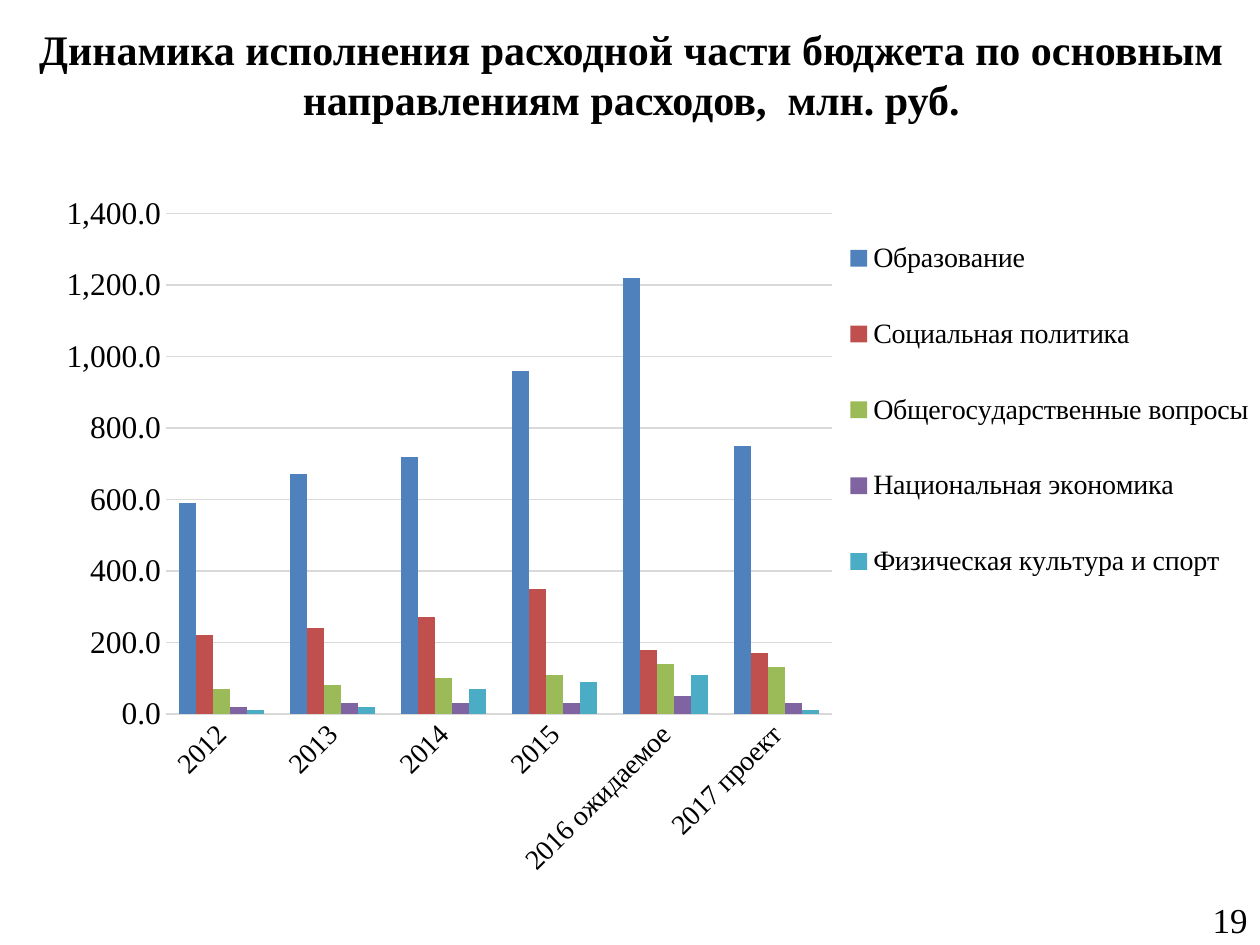
from lxml import etree
from pptx import Presentation
from pptx.chart import data as cd
from pptx.dml import color as dc
from pptx.enum import chart as ec, text as et
from pptx.oxml import ns
from pptx.util import Inches, Pt

FONT = "Times New Roman"
HUES = {
    "text": "000000",
    "grid": "D9D9D9",
    "Образование": "4F81BD",
    "Социальная политика": "C0504D",
    "Общегосударственные вопросы": "9BBB59",
    "Национальная экономика": "8064A2",
    "Физическая культура и спорт": "4BACC6",
}
YEARS = ["2012", "2013", "2014", "2015", "2016 ожидаемое", "2017 проект"]
COSTS = {
    "Образование": [590, 670, 720, 960, 1220, 750],
    "Социальная политика": [220, 240, 270, 350, 180, 170],
    "Общегосударственные вопросы": [70, 80, 100, 110, 140, 130],
    "Национальная экономика": [20, 30, 30, 30, 50, 30],
    "Физическая культура и спорт": [10, 20, 70, 90, 110, 10],
}


def rgb(name):
    return dc.RGBColor.from_string(HUES[name])


def style(font, size, bold=False, face=FONT):
    font.name, font.size, font.bold = face, Pt(size), bold
    font.color.rgb = rgb("text")


def write(shape, words, size, align, bold=False):
    frame = shape.text_frame
    frame.word_wrap = True
    frame.vertical_anchor = et.MSO_ANCHOR.MIDDLE
    para = frame.paragraphs[0]
    para.alignment = align
    run = para.add_run()
    run.text = words
    style(run.font, size, bold)


def place(node, index, box, inner=False):
    for old in node.findall(ns.qn("c:layout")):
        node.remove(old)
    layout = etree.Element(ns.qn("c:layout"))
    manual = etree.SubElement(layout, ns.qn("c:manualLayout"))
    items = [("layoutTarget", "inner")] if inner else []
    items += [("xMode", "edge"), ("yMode", "edge")]
    items += zip("xywh", box)
    for tag, val in items:
        etree.SubElement(manual, ns.qn("c:" + tag)).set("val", str(val))
    node.insert(index, layout)


def set_axis(axis, size):
    axis.major_tick_mark = axis.minor_tick_mark = ec.XL_TICK_MARK.NONE
    axis.format.line.fill.background()
    style(axis.tick_labels.font, size)


def add_chart(slide):
    data = cd.CategoryChartData(number_format="#,##0.0")
    data.categories = YEARS
    for name, vals in COSTS.items():
        data.add_series(name, vals)
    chart = slide.shapes.add_chart(
        ec.XL_CHART_TYPE.COLUMN_CLUSTERED, Inches(0.02), Inches(1.39),
        Inches(9.98), Inches(6.11), data).chart
    style(chart.font, 10, face="Calibri")
    chart.has_title = False

    plot = chart.plots[0]
    plot.gap_width, plot.overlap = 150, 0
    plot.vary_by_categories = False
    for row in plot.series:
        row.format.fill.solid()
        row.format.fill.fore_color.rgb = rgb(row.name)

    cats, vals = chart.category_axis, chart.value_axis
    set_axis(cats, 16)
    cats.format.line.color.rgb = rgb("grid")
    cats._element.txPr.bodyPr.set("rot", "-2700000")
    set_axis(vals, 18)
    vals.minimum_scale, vals.maximum_scale, vals.major_unit = 0, 1400, 200
    vals.tick_labels.number_format = "#,##0.0"
    vals.tick_labels.number_format_is_linked = False
    line = vals.major_gridlines.format.line
    line.color.rgb, line.width = rgb("grid"), Pt(0.75)

    chart.has_legend = True
    legend = chart.legend
    legend.position = ec.XL_LEGEND_POSITION.BOTTOM
    legend.include_in_layout = False
    style(legend.font, 16)
    area = chart._chartSpace.chart.plotArea
    place(area, 0, (0.13, 0.05, 0.53, 0.65), inner=True)
    place(legend._element, 1, (0.67, 0.03, 0.33, 0.55))


def main():
    deck = Presentation()
    deck.slide_width, deck.slide_height = Inches(10), Inches(7.5)
    slide = deck.slides.add_slide(deck.slide_layouts[5])
    title = slide.shapes.title
    title.left, title.top = Inches(0.02), Inches(-0.04)
    title.width, title.height = Inches(9.98), Inches(1.25)
    write(title, "Динамика исполнения расходной части бюджета по основным "
          "направлениям расходов,  млн. руб.", 24, et.PP_ALIGN.CENTER, bold=True)
    add_chart(slide)
    number = slide.shapes.add_textbox(
        Inches(7.67), Inches(7.1), Inches(2.33), Inches(0.4))
    write(number, "19", 20, et.PP_ALIGN.RIGHT)
    deck.save("out.pptx")


if __name__ == "__main__":
    main()
